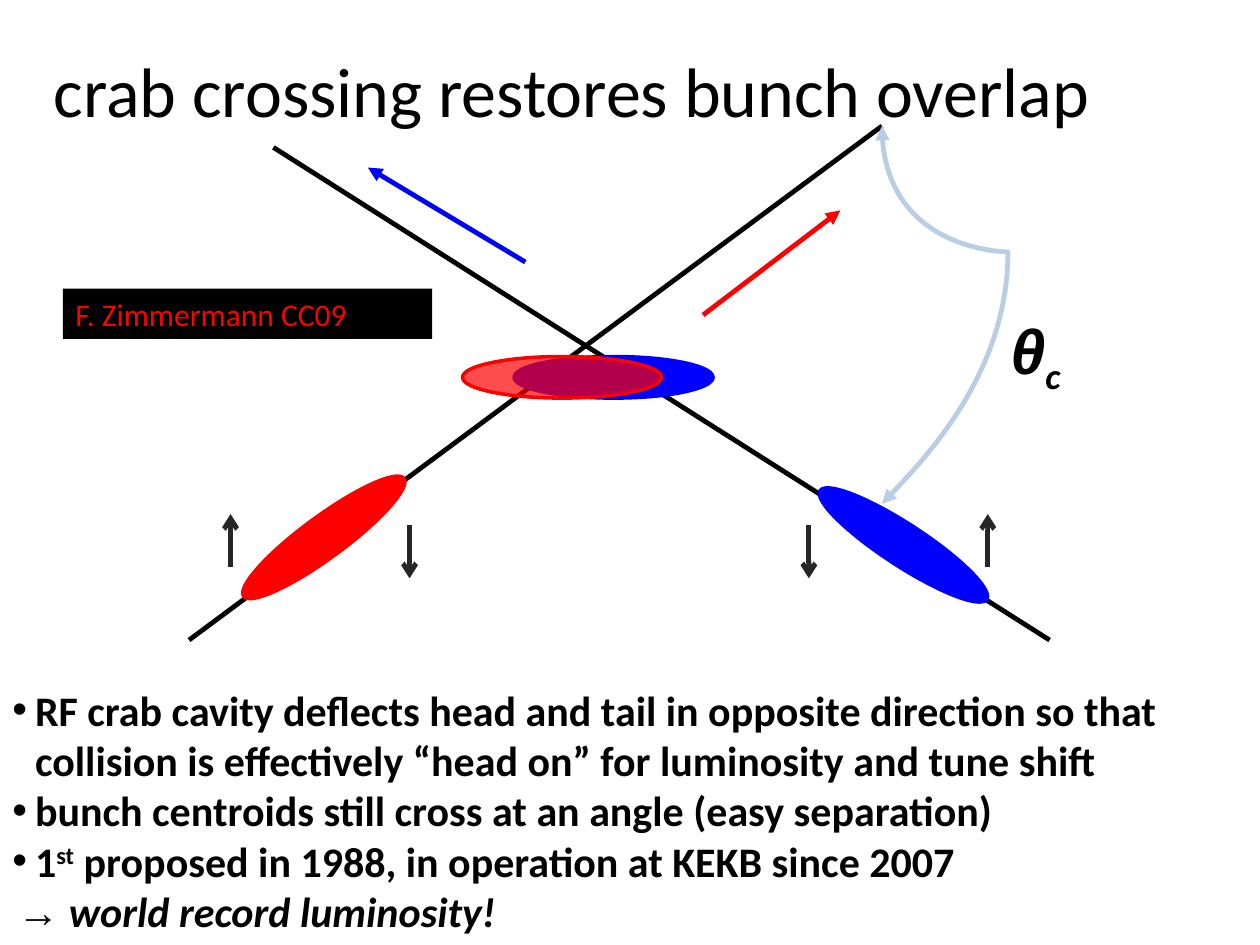
from pptx import Presentation
from pptx.dml.color import RGBColor
from pptx.enum.shapes import MSO_CONNECTOR, MSO_SHAPE
from pptx.oxml.ns import qn
from pptx.util import Inches, Pt
from lxml.etree import SubElement

BLACK, RED, BLUE = "000000", "FF0000", "0000FF"
KICK_GRAY, ANGLE_BLUE = "262626", "B9CDE5"


def color(target, value):
    """Set a fill or line format to a solid hex colour."""
    fill = target if hasattr(target, "solid") else target.fill
    fill.solid()
    fill.fore_color.rgb = RGBColor.from_string(value)


class CrossingSlide:
    def __init__(self, slide, face="Calibri", line_width=2.75):
        self.shapes = slide.shapes
        self.face = face
        self.line_width = line_width

    def style_line(self, shape, line_color, head=None, tail=None):
        color(shape.line, line_color)
        shape.line.width = Pt(self.line_width)
        properties = shape._element.spPr.find(qn("a:ln"))
        for tag, kind in (("a:headEnd", head), ("a:tailEnd", tail)):
            if kind:
                SubElement(properties, qn(tag), type=kind)

    def line(self, start, end, line_color, tail=None):
        points = [Inches(value) for value in (*start, *end)]
        connector = self.shapes.add_connector(MSO_CONNECTOR.STRAIGHT, *points)
        self.style_line(connector, line_color, tail=tail)
        SubElement(connector._element.spPr, qn("a:effectLst"))

    def curve(self, start, controls, line_color):
        """Draw a Bezier curve with three control points per segment."""
        builder = self.shapes.build_freeform(*start, scale=Inches(1))
        builder.add_line_segments(controls, close=False)
        arc = builder.convert_to_shape()
        arc.shadow.inherit = False
        arc.fill.background()
        self.style_line(arc, line_color, head="triangle", tail="triangle")
        straight = list(arc._element.iter(qn("a:lnTo")))
        outline = straight[0].getparent()
        for first in range(0, len(straight), 3):
            bezier = SubElement(outline, qn("a:cubicBezTo"))
            for step in straight[first:first + 3]:
                bezier.append(step[0])
                outline.remove(step)

    def shape(self, kind, box, fill_color):
        shape = self.shapes.add_shape(kind, *map(Inches, box))
        shape.shadow.inherit = False
        color(shape.fill, fill_color)
        return shape

    def bunch(self, left, top, fill_color, rotation=0, opacity=None):
        ellipse = self.shape(MSO_SHAPE.OVAL, (left, top, 1.58, 0.33), fill_color)
        ellipse.rotation = rotation
        color(ellipse.line, fill_color)
        ellipse.line.width = Pt(2)
        if opacity:
            rgb = ellipse._element.spPr.find(qn("a:solidFill"))[0]
            SubElement(rgb, qn("a:alpha"), val=str(opacity * 1000))

    def label(self, box, text, fill_color, text_color):
        plate = self.shape(MSO_SHAPE.RECTANGLE, box, fill_color)
        plate.line.fill.background()
        self.put_text(plate.text_frame.paragraphs[0], [(text,)], 18, text_color)

    def text_box(self, box, wrap=True):
        frame = self.shapes.add_textbox(*map(Inches, box)).text_frame
        frame.word_wrap = wrap
        return frame

    def put_text(self, paragraph, runs, size, text_color=BLACK, bold=False,
                 italic=False, margin=0, bullet=None):
        """Fill a paragraph with (text, baseline percent, font) runs."""
        properties = paragraph._p.get_or_add_pPr()
        properties.set("algn", "l")
        if margin:
            properties.set("marL", str(Inches(margin)))
        if bullet:
            properties.set("indent", str(-Inches(margin)))
            SubElement(properties, qn("a:buFont"), typeface="Arial")
            SubElement(properties, qn("a:buChar"), char=bullet)
        font = paragraph.font
        font.name, font.size = self.face, Pt(size)
        font.bold, font.italic = bold, italic
        color(font.fill, text_color)
        for text, baseline, face in ((*run, None, None)[:3] for run in runs):
            run = paragraph.add_run()
            run.text = text
            if baseline:
                run._r.get_or_add_rPr().set("baseline", str(baseline * 1000))
            if face:
                run.font.name = face


def main():
    deck = Presentation()
    deck.slide_width, deck.slide_height = Inches(10), Inches(7.5)
    page = CrossingSlide(deck.slides.add_slide(deck.slide_layouts[6]))

    title = page.text_box((0.33, 0.33, 8.68, 1.45))
    page.put_text(title.paragraphs[0],
                  [("crab crossing restores bunch overlap",)], 40)

    # Beam paths and outgoing directions
    page.line((1.5, 5.08), (7, 1), BLACK)
    page.line((2.17, 1.17), (8.33, 5.08), BLACK)
    page.line((5.58, 2.5), (6.67, 1.67), RED, tail="triangle")
    page.line((4.17, 2.08), (2.92, 1.33), BLUE, tail="triangle")

    # Crossing angle
    page.curve((6.86, 1.29), [
        (7.24, 1.58), (7.62, 1.87), (7.64, 2.3),
        (7.65, 2.74), (7.06, 3.64), (6.94, 3.91),
        (6.82, 4.17), (6.94, 3.89), (6.94, 3.89),
    ], ANGLE_BLUE)
    angle = page.text_box((7.92, 2.42, 0.61, 0.71), wrap=False)
    page.put_text(angle.paragraphs[0], [("θ", None, "Arial"), ("c", -25)], 36,
                  bold=True, italic=True)

    # Colliding bunches, then incoming tilted ones
    page.bunch(4.08, 2.83, BLUE)
    page.bunch(3.67, 2.83, RED, opacity=70)
    page.bunch(1.78, 4.1, RED, rotation=323.7)
    page.bunch(6.38, 4.16, BLUE, rotation=33.1)

    # Transverse kicks on head and tail
    for x, start, end in ((3.25, 4.17, 4.59), (1.83, 4.5, 4.08),
                          (7.84, 4.5, 4.08), (6.42, 4.17, 4.59)):
        page.line((x, start), (x, end), KICK_GRAY, tail="arrow")

    notes = page.text_box((0, 5.38, 10, 2.12))
    points = [
        [("RF crab cavity deflects head and tail in opposite direction so that "
          "collision is effectively “head on” for luminosity and tune shift",)],
        [("bunch centroids still cross at an angle (easy separation)",)],
        [("1",), ("st", 30), (" proposed in 1988, in operation at KEKB since 2007",)],
    ]
    for index, runs in enumerate(points):
        paragraph = notes.add_paragraph() if index else notes.paragraphs[0]
        page.put_text(paragraph, runs, 24, bold=True, margin=0.18, bullet="•")
    page.put_text(notes.add_paragraph(),
                  [("→", None, "Arial"), (" world record luminosity!",)], 24,
                  bold=True, italic=True, margin=0.04)

    page.label((0.5, 2.29, 2.93, 0.4), "F. Zimmermann CC09", BLACK, RED)
    deck.save("out.pptx")


if __name__ == "__main__":
    main()
